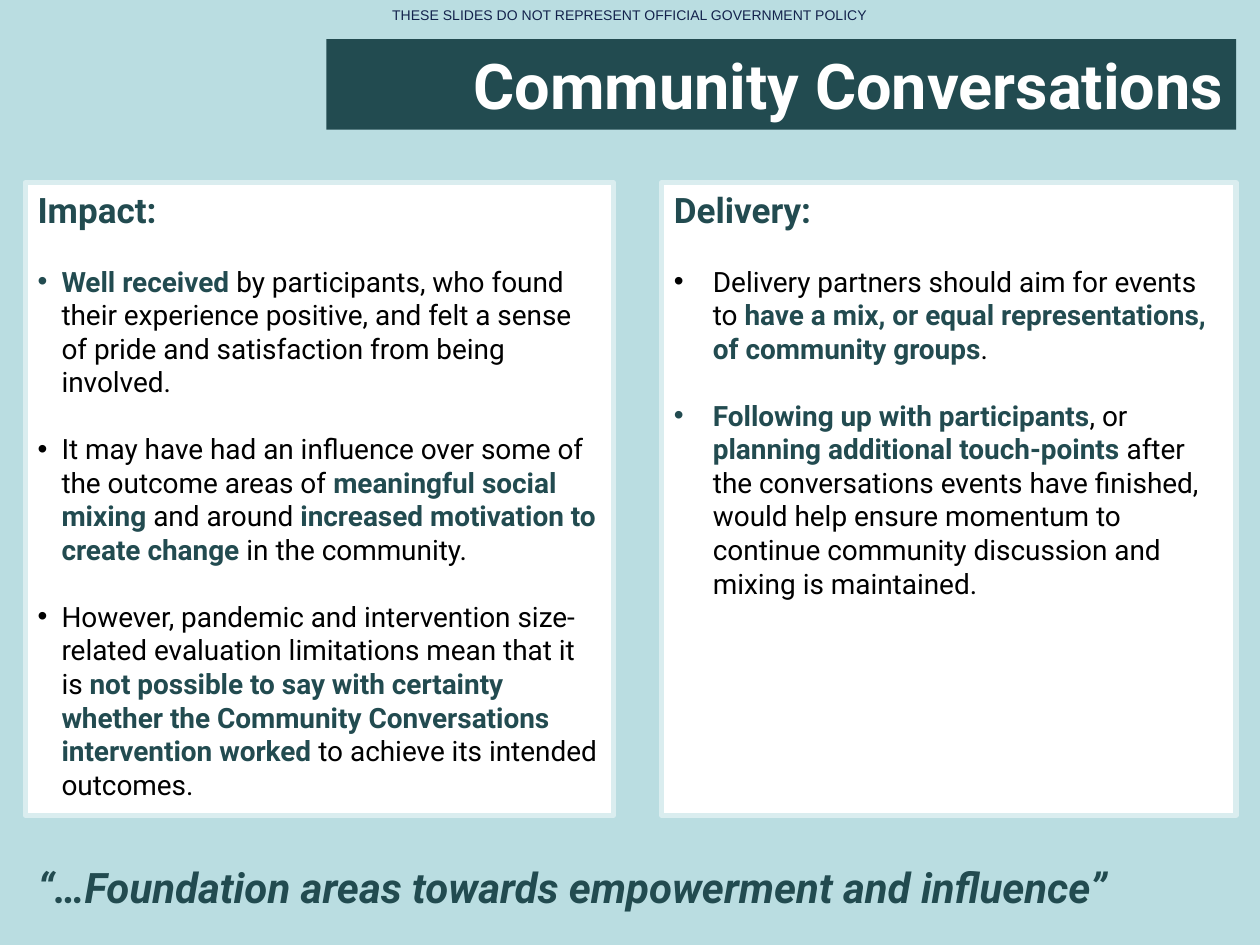
from lxml import etree
from pptx import Presentation
from pptx import util as u
from pptx.dml.color import RGBColor
from pptx.enum import shapes, text
from pptx.oxml.ns import qn

COLOURS = {
    "background": "BADDE1", "dark": "224B50", "white": "FFFFFF",
    "border": "DAEDEF", "body": "000000", "notice": "13224C",
}
IMPACT = [
    [("Well received ", True),
     ("by participants, who found their experience positive, and felt a sense "
      "of pride and satisfaction from being involved.", False)],
    [("It may have had an influence over some of the outcome areas of ", False),
     ("meaningful social mixing ", True),
     ("and around ", False),
     ("increased motivation to create change ", True),
     ("in the community.", False)],
    [("However, pandemic and intervention size-related evaluation limitations "
      "mean that it is ", False),
     ("not possible to say with certainty whether the Community Conversations "
      "intervention worked ", True),
     ("to achieve its intended outcomes.", False)],
]
DELIVERY = [
    [("Delivery partners should aim for events to ", False),
     ("have a mix, or equal representations, of community groups", True),
     (".", False)],
    [("Following up with participants", True),
     (", or ", False),
     ("planning additional touch-points ", True),
     ("after the conversations events have finished, would help ensure momentum "
      "to continue community discussion and mixing is maintained.", False)],
]


def rgb(name):
    """Return the named colour."""
    return RGBColor.from_string(COLOURS[name])


def add_run(p, words, colour, **formats):
    """Add a run to a paragraph with the given font values."""
    r = p.add_run()
    r.text = words
    for key, value in {"name": "Roboto", **formats}.items():
        setattr(r.font, key, value)
    r.font.color.rgb = rgb(colour)


def set_frame(tf, anchor):
    """Make a text frame wrap at a fixed size."""
    formats = {"word_wrap": True, "auto_size": text.MSO_AUTO_SIZE.NONE,
               "vertical_anchor": anchor}
    for key, value in formats.items():
        setattr(tf, key, value)


def add_bullet(p, indent):
    """Give a paragraph a hanging round bullet."""
    pPr = p._p.get_or_add_pPr()
    pPr.set("marL", str(indent))
    pPr.set("indent", str(-indent))
    etree.SubElement(pPr, qn("a:buFont")).set("typeface", "Arial")
    etree.SubElement(pPr, qn("a:buChar")).set("char", "•")


def add_title(s, box, words):
    """Place the title in a dark bar."""
    sp = s.shapes.title
    sp.left, sp.top, sp.width, sp.height = box
    sp.fill.solid()
    sp.fill.fore_color.rgb = rgb("dark")
    set_frame(sp.text_frame, text.MSO_ANCHOR.MIDDLE)
    p = sp.text_frame.paragraphs[0]
    p.alignment = text.PP_ALIGN.RIGHT
    add_run(p, words, "white", size=u.Pt(36), bold=True)


def add_line(s, box, words, colour, align, **formats):
    """Place one line of text in a box."""
    tf = s.shapes.add_textbox(*box).text_frame
    set_frame(tf, text.MSO_ANCHOR.TOP)
    p = tf.paragraphs[0]
    p.alignment = align
    add_run(p, words, colour, **formats)


def add_panel(s, box, heading, points, indent):
    """Place a bordered panel with a heading and bullet points."""
    sp = s.shapes.add_shape(shapes.MSO_SHAPE.RECTANGLE, *box)
    sp.shadow.inherit = False
    sp.fill.solid()
    sp.fill.fore_color.rgb = rgb("white")
    sp.line.color.rgb = rgb("border")
    sp.line.width = u.Pt(3)
    tf = sp.text_frame
    set_frame(tf, text.MSO_ANCHOR.TOP)
    p = tf.paragraphs[0]
    p.alignment = text.PP_ALIGN.LEFT
    add_run(p, heading, "dark", size=u.Pt(20), bold=True)
    for point in points:
        p = tf.add_paragraph()
        p.alignment = text.PP_ALIGN.LEFT
        p.space_before = u.Pt(19)
        add_bullet(p, indent)
        for words, strong in point:
            add_run(p, words, "dark" if strong else "body",
                    size=u.Pt(16), bold=strong)


def inches(*values):
    """Turn numbers into lengths."""
    return [u.Inches(v) for v in values]


def main():
    """Build the slide and save it."""
    prs = Presentation()
    prs.slide_width, prs.slide_height = inches(10, 7.5)
    s = prs.slides.add_slide(prs.slide_layouts[5])
    s.background.fill.solid()
    s.background.fill.fore_color.rgb = rgb("background")
    add_line(s, inches(2.9, 0, 4.2, 0.24),
             "THESE SLIDES DO NOT REPRESENT OFFICIAL GOVERNMENT POLICY",
             "notice", text.PP_ALIGN.CENTER, name="Arial", size=u.Pt(8))
    add_title(s, inches(2.59, 0.31, 7.22, 0.72), "Community Conversations")
    add_panel(s, inches(0.2, 1.45, 4.67, 5.02), "Impact:", IMPACT, u.Inches(0.19))
    add_panel(s, inches(5.25, 1.45, 4.56, 5.02), "Delivery:", DELIVERY, u.Inches(0.31))
    add_line(s, inches(0.2, 6.79, 9.6, 0.5),
             "“…Foundation areas towards empowerment and influence”",
             "dark", text.PP_ALIGN.LEFT, size=u.Pt(24), bold=True, italic=True)
    prs.save("out.pptx")


if __name__ == "__main__":
    main()
